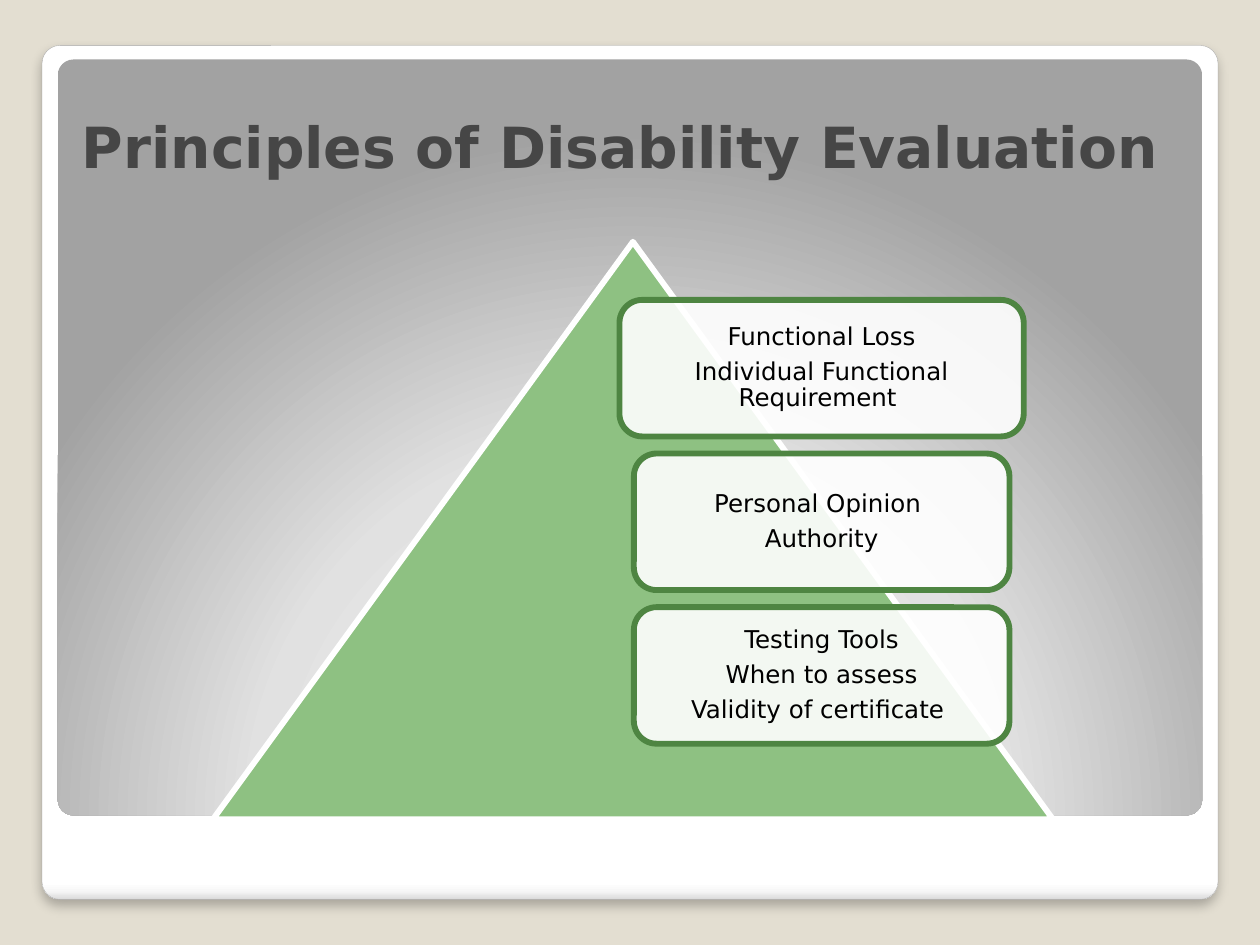
import pptx
import pptx.dml.color
import pptx.enum.shapes
import pptx.enum.text
import pptx.oxml
import pptx.oxml.ns
import pptx.util

Pt = pptx.util.Pt
Kind = pptx.enum.shapes.MSO_SHAPE
Align = pptx.enum.text.PP_ALIGN
Anchor = pptx.enum.text.MSO_ANCHOR

COLORS = {
    "background": "E3DED1", "white": "FFFFFF", "edge": "A4A4A4",
    "title": "464646", "pyramid": "8EC182", "outline": "4E8542",
    "text": "000000", "shadow": "000000",
}
CARD_STOPS = [(0, "FFFFFF"), (98, "FFFFFF"), (99, "F7F7F7"), (100, "DADADA")]
PANEL_STOPS = [(0, "FFFFFF"), (55, "E1E1E1"), (100, "A2A2A2")]
DOWNWARD = '<a:lin ang="5400000" scaled="0"/>'
GLOW_FROM_BELOW = ('<a:path path="circle"><a:fillToRect l="50000" t="175000" '
                   'r="50000" b="-75000"/></a:path>')

PRINCIPLES = [
    (231, ["Functional Loss", "Individual Functional Requirement "]),
    (214.6, ["Personal Opinion ", "Authority"]),
    (214.6, ["Testing Tools", "When to assess", "Validity of certificate "]),
]


def color(name):
    return pptx.dml.color.RGBColor.from_string(COLORS[name])


def drawing_xml(tag, content):
    return pptx.oxml.parse_xml(
        f'<a:{tag} {pptx.oxml.ns.nsdecls("a")}>{content}</a:{tag}>')


class SlideBuilder:
    font = "DejaVu Sans"

    def __init__(self, page):
        self.page = page

    def background(self, name):
        fill = self.page.background.fill
        fill.solid()
        fill.fore_color.rgb = color(name)

    def shape(self, kind, left, top, width, height, fill=None, line=None, weight=0):
        shape = self.page.shapes.add_shape(
            kind, Pt(left), Pt(top), Pt(width), Pt(height))
        shape.shadow.inherit = False
        if fill:
            shape.fill.solid()
            shape.fill.fore_color.rgb = color(fill)
        if line:
            shape.line.color.rgb = color(line)
            shape.line.width = Pt(weight)
        else:
            shape.line.fill.background()
        return shape

    def gradient_panel(self, left, top, width, height, stops, direction, **line):
        panel = self.shape(Kind.ROUNDED_RECTANGLE, left, top, width, height, **line)
        panel.adjustments[0] = 0.021
        marks = "".join(f'<a:gs pos="{at * 1000}"><a:srgbClr val="{tone}"/></a:gs>'
                        for at, tone in stops)
        geometry = panel._element.spPr.find(pptx.oxml.ns.qn("a:prstGeom"))
        geometry.addnext(drawing_xml("gradFill", f"<a:gsLst>{marks}</a:gsLst>{direction}"))
        return panel

    def drop_shadow(self, shape, blur, distance, opacity):
        effects = shape._element.spPr.find(pptx.oxml.ns.qn("a:effectLst"))
        shadow = drawing_xml(
            "outerShdw", f'<a:srgbClr val="{COLORS["shadow"]}">'
            f'<a:alpha val="{opacity * 1000}"/></a:srgbClr>')
        for key, value in (("blurRad", Pt(blur)), ("dist", Pt(distance)),
                           ("dir", 5400000), ("rotWithShape", 0)):
            shadow.set(key, str(int(value)))
        effects.append(shadow)

    def style_text(self, para, size, name, bold=False):
        for span in para.runs:
            span.font.name = self.font
            span.font.size = Pt(size)
            span.font.bold = bold
            span.font.color.rgb = color(name)

    def title(self, text, left, top, width, height):
        title = self.page.shapes.title
        title.left, title.top = Pt(left), Pt(top)
        title.width, title.height = Pt(width), Pt(height)
        frame = title.text_frame
        frame.text = text
        frame.auto_size = pptx.enum.text.MSO_AUTO_SIZE.NONE
        frame.vertical_anchor = Anchor.BOTTOM
        frame.paragraphs[0].alignment = Align.LEFT
        self.style_text(frame.paragraphs[0], 32.4, "title", bold=True)

    def principle(self, center, top, width, height, lines):
        box = self.shape(Kind.ROUNDED_RECTANGLE, center - width / 2, top, width,
                         height, "white", "outline", 3.35)
        # Let the pyramid show faintly through the box
        tone = box._element.spPr.find(pptx.oxml.ns.qn("a:solidFill"))[0]
        tone.append(pptx.oxml.parse_xml(
            f'<a:alpha {pptx.oxml.ns.nsdecls("a")} val="90000"/>'))
        frame = box.text_frame
        frame.word_wrap = True
        frame.vertical_anchor = Anchor.MIDDLE
        frame.margin_left = frame.margin_right = Pt(4.2)
        frame.margin_top = frame.margin_bottom = Pt(4.2)
        frame.text = "\n".join(lines)
        for para in frame.paragraphs:
            para.alignment = Align.CENTER
            para.line_spacing = 0.9
            para.space_after = Pt(4.9)
            self.style_text(para, 14, "text")


def main():
    deck = pptx.Presentation()
    deck.slide_width, deck.slide_height = Pt(720), Pt(540)
    builder = SlideBuilder(deck.slides.add_slide(deck.slide_layouts[5]))

    # Framed backdrop
    builder.background("background")
    card = builder.gradient_panel(24, 26, 672, 488, CARD_STOPS, DOWNWARD,
                                  line="edge", weight=0.16)
    builder.drop_shadow(card, blur=6, distance=4, opacity=25)
    panel = builder.gradient_panel(33, 34, 654, 432, PANEL_STOPS, GLOW_FROM_BELOW)

    # Title, brought in front of the backdrop
    builder.title("Principles of Disability Evaluation", 39.6, 24, 644.4, 82.5)
    panel._element.addnext(builder.page.shapes.title._element)

    # Pyramid with its stack of principles
    builder.shape(Kind.ISOSCELES_TRIANGLE, 121.7, 138.2, 480, 330,
                  "pyramid", "white", 3.35)
    for row, (width, lines) in enumerate(PRINCIPLES):
        builder.principle(469.5, 171.4 + 87.8 * row, width, 78, lines)

    deck.save("out.pptx")


if __name__ == "__main__":
    main()
